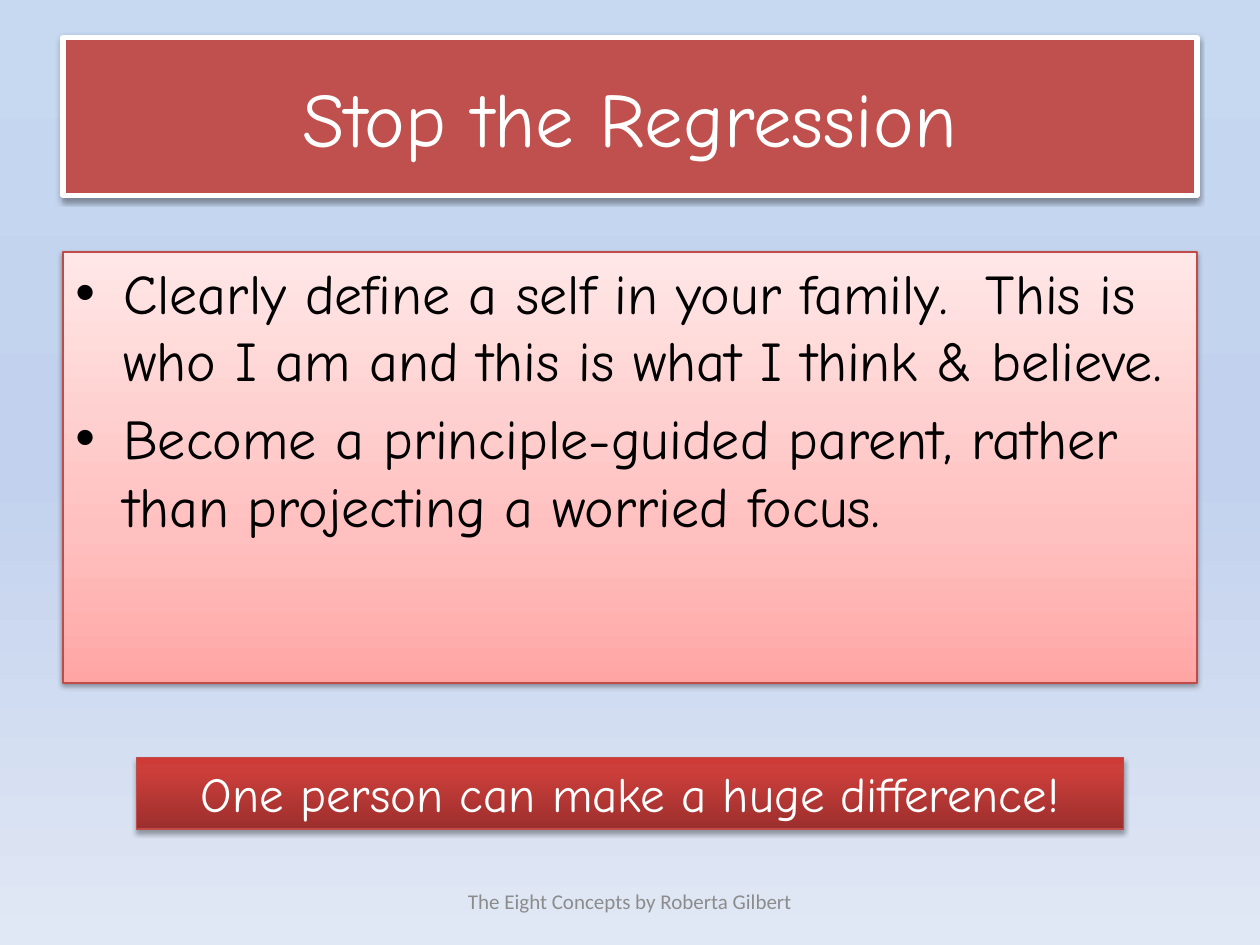
from lxml.etree import SubElement
from pptx import Presentation
from pptx.dml.color import RGBColor
from pptx.enum.shapes import MSO_SHAPE
from pptx.enum.text import MSO_ANCHOR, PP_ALIGN
from pptx.oxml.ns import qn
from pptx.util import Inches, Pt

TITLE = "Stop the Regression"
ADVICE = [
    "Clearly define a self in your family.  This is who I am and this is what I think & believe.",
    "Become a principle-guided parent, rather than projecting a worried focus.",
]
MESSAGE = "One person can make a huge difference!"
FOOTER = "The Eight Concepts by Roberta Gilbert"

HEAD_FONT, FOOT_FONT = "Comic Neue", "Calibri"
COLORS = {"title": "C0504D", "edge": "BF4C48", "white": "FFFFFF",
          "black": "000000", "grey": "8C8C8C"}
# Gradient stops from top to bottom: (percent, colour)
SKY = [(0, "C6D9F1"), (50, "C2D1ED"), (100, "E1E8F5")]
PINK = [(0, "FFE7E7"), (65, "FFC0BF"), (100, "FFA6A5")]
RED = [(0, "CE3B37"), (20, "CB3E3A"), (100, "9C2F2D")]

WIDTH, HEIGHT, MARGIN = 10, 7.5, 0.5
INDENT = 0.38


def rgb(name):
    return RGBColor.from_string(COLORS[name])


def centred(width, top, height):
    return [Inches(v) for v in ((WIDTH - width) / 2, top, width, height)]


def fill_gradient(fill, element, stops):
    """Fill from top to bottom with any number of stops."""
    fill.gradient()
    fill.gradient_angle = 270
    stop_list = element.find(".//" + qn("a:gsLst"))
    for old in list(stop_list):
        stop_list.remove(old)
    for percent, color in stops:
        gs = SubElement(stop_list, qn("a:gs"), pos=str(percent * 1000))
        SubElement(gs, qn("a:srgbClr"), val=color)


def outline(sp, color, width):
    sp.line.color.rgb = rgb(color)
    sp.line.width = Pt(width)


def drop_shadow(sp, opacity, distance):
    sp.shadow.inherit = False
    effects = sp._element.spPr.find(qn("a:effectLst"))
    shadow = SubElement(effects, qn("a:outerShdw"), blurRad=str(Pt(3.1)),
                        dist=str(Pt(distance)), dir="5400000", rotWithShape="0")
    color = SubElement(shadow, qn("a:srgbClr"), val=COLORS["black"])
    SubElement(color, qn("a:alpha"), val=str(opacity * 1000))


def write(sp, lines, size, color, font=HEAD_FONT, align=PP_ALIGN.CENTER,
          anchor=MSO_ANCHOR.MIDDLE):
    tf = sp.text_frame
    tf.text = "\n".join(lines)
    tf.word_wrap = True
    tf.vertical_anchor = anchor
    for p in tf.paragraphs:
        p.alignment = align
        for r in p.runs:
            r.font.name, r.font.size = font, Pt(size)
            r.font.color.rgb = rgb(color)


def add_bullets(tf, space_before):
    for p in tf.paragraphs:
        p.space_before = Pt(space_before)
        pPr = p._p.get_or_add_pPr()
        pPr.set("marL", str(Inches(INDENT)))
        pPr.set("indent", str(-Inches(INDENT)))
        SubElement(pPr, qn("a:buFont"), typeface="Arial")
        SubElement(pPr, qn("a:buChar"), char="•")


def add_panel(slide, box, stops, opacity, distance):
    sp = slide.shapes.add_shape(MSO_SHAPE.RECTANGLE, *box)
    fill_gradient(sp.fill, sp._element, stops)
    outline(sp, "edge", 0.75)
    drop_shadow(sp, opacity, distance)
    return sp


def main():
    prs = Presentation()
    prs.slide_width, prs.slide_height = Inches(WIDTH), Inches(HEIGHT)
    slide = prs.slides.add_slide(prs.slide_layouts[5])
    fill_gradient(slide.background.fill, slide._element, SKY)
    full_width = WIDTH - 2 * MARGIN

    title = slide.shapes.title
    title.left, title.top, title.width, title.height = centred(full_width, 0.3, 1.25)
    title.fill.solid()
    title.fill.fore_color.rgb = rgb("title")
    outline(title, "white", 3)
    drop_shadow(title, 38, 1.6)
    write(title, [TITLE], 44, "white")

    advice = add_panel(slide, centred(full_width, 2, 3.42), PINK, 38, 1.6)
    write(advice, ADVICE, 32, "black", align=PP_ALIGN.LEFT, anchor=MSO_ANCHOR.TOP)
    add_bullets(advice.text_frame, 6.4)

    footer = slide.shapes.add_textbox(*centred(3.17, 6.95, 0.4))
    write(footer, [FOOTER], 12, "grey", FOOT_FONT)

    message = add_panel(slide, centred(7.83, 6.01, 0.57), RED, 35, 1.8)
    write(message, [MESSAGE], 28, "white", anchor=MSO_ANCHOR.TOP)

    prs.save("out.pptx")


if __name__ == "__main__":
    main()
